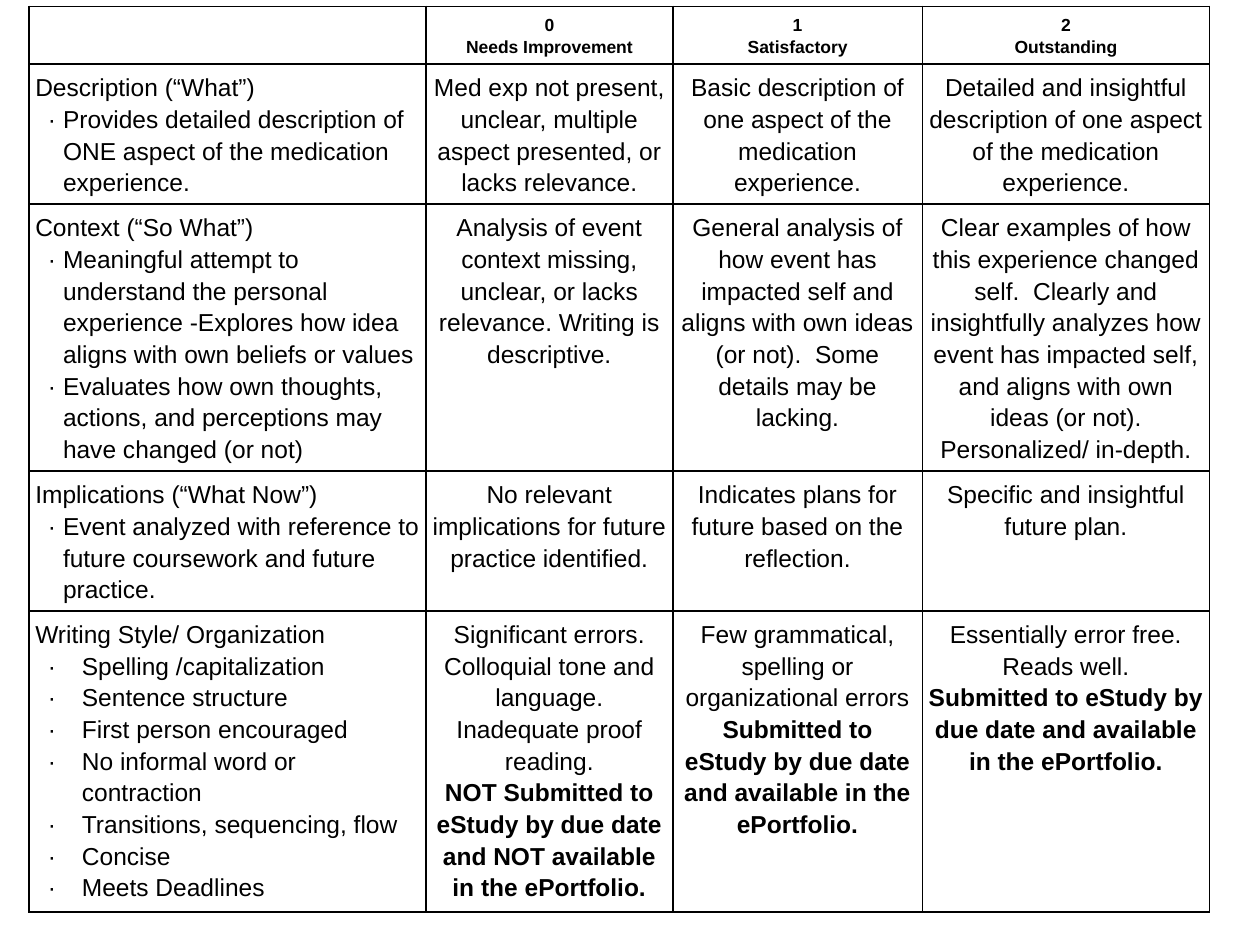
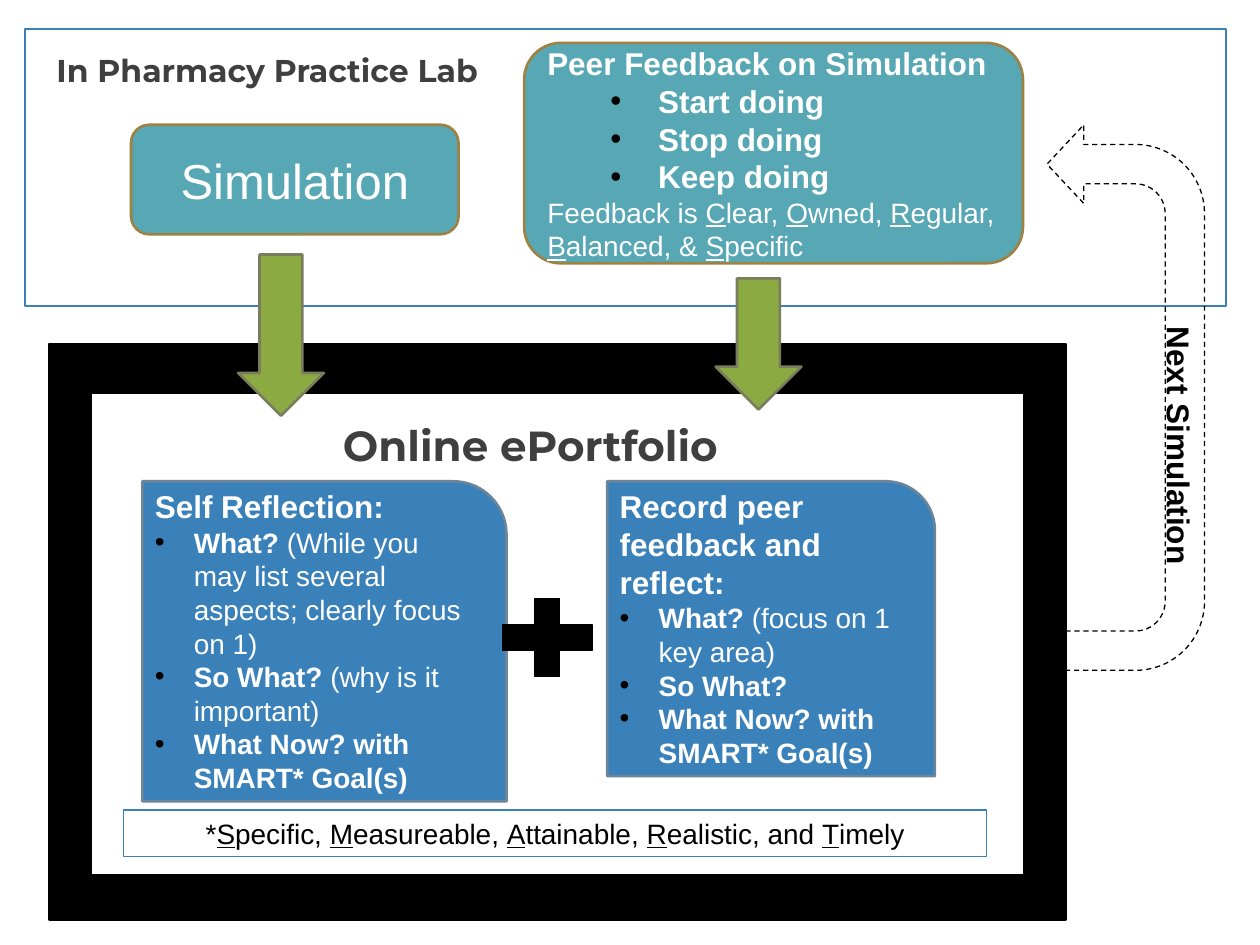
"""Build a reflection rubric and a simulation feedback cycle."""
from dataclasses import dataclass

from lxml import etree
from pptx import Presentation
from pptx.dml.color import RGBColor
from pptx.enum import dml, shapes, text
from pptx.oxml import ns
from pptx.util import Inches, Pt


@dataclass(frozen=True)
class Theme:
    """Colours, fonts and type sizes shared by both slides."""
    black: str = "000000"
    white: str = "FFFFFF"
    blue: str = "3A81BA"
    blue_edge: str = "6C859A"
    teal: str = "57A7B5"
    teal_edge: str = "9E8243"
    green: str = "8BAB42"
    green_edge: str = "797D5E"
    heading: str = "3F3F3F"
    body_font: str = "Arial"
    heading_font: str = "Montserrat"
    level_size: int = 10
    rubric_size: int = 14
    note_size: int = 16
    lead_size: int = 18
    title_size: int = 24
    simulation_size: int = 28


THEME = Theme()
SHAPE = shapes.MSO_SHAPE
CENTER = text.PP_ALIGN.CENTER
LEFT = text.PP_ALIGN.LEFT

LEVELS = ["Needs Improvement", "Satisfactory", "Outstanding"]
COLUMN_WIDTHS = [3.15, 1.96, 1.98, 2.28]
ROW_HEIGHTS = [0.46, 1.11, 2.12, 1.11, 2.39]
ON_TIME = "Submitted to eStudy by due date and available in the ePortfolio."
LATE = "NOT Submitted to eStudy by due date and NOT available in the ePortfolio."
DEADLINES = [LATE, ON_TIME, ON_TIME]

CRITERIA = [
    ("Description (“What”)",
     ["Provides detailed description of ONE aspect of the medication experience."],
     [["Med exp not present, unclear, multiple aspect presented, or lacks relevance."],
      ["Basic description of one aspect of the medication experience."],
      ["Detailed and insightful description of one aspect of the medication experience."]]),
    ("Context (“So What”)",
     ["Meaningful attempt to understand the personal experience -Explores how idea "
      "aligns with own beliefs or values",
      "Evaluates how own thoughts, actions, and perceptions may have changed (or not)"],
     [["Analysis of event context missing, unclear, or lacks relevance. "
       "Writing is descriptive."],
      ["General analysis of how event has impacted self and aligns with own ideas "
       "(or not).  Some details may be lacking."],
      ["Clear examples of how this experience changed self.  Clearly and insightfully "
       "analyzes how event has impacted self, and aligns with own ideas (or not). "
       "Personalized/ in-depth."]]),
    ("Implications (“What Now”)",
     ["Event analyzed with reference to future coursework and future practice."],
     [["No relevant implications for future practice identified."],
      ["Indicates plans for future based on the reflection."],
      ["Specific and insightful future plan."]]),
    ("Writing Style/ Organization",
     ["Spelling /capitalization", "Sentence structure", "First person encouraged",
      "No informal word or contraction", "Transitions, sequencing, flow", "Concise",
      "Meets Deadlines"],
     [["Significant errors.", "Colloquial tone and language. Inadequate proof reading."],
      ["Few grammatical, spelling or organizational errors"],
      ["Essentially error free.", "Reads well."]]),
]


def rgb(code):
    """Turn a hex code into a colour."""
    return RGBColor.from_string(code)


def style(font, size, color=THEME.black, bold=False, name=THEME.body_font):
    """Set the look of a font."""
    font.name, font.size, font.bold = name, Pt(size), bold
    font.color.rgb = rgb(color)


def add_paragraph(frame, size, color=THEME.black, bold=False, align=LEFT,
                  name=THEME.body_font):
    """Add a styled paragraph, using the first one while it is empty."""
    first = frame.paragraphs[0]
    paragraph = frame.add_paragraph() if first.runs else first
    paragraph.alignment = align
    style(paragraph.font, size, color, bold, name)
    return paragraph


def add_text(frame, words, size, **look):
    """Add a paragraph with one run."""
    paragraph = add_paragraph(frame, size, **look)
    paragraph.add_run().text = words
    return paragraph


def add_initials(frame, words, **look):
    """Add a paragraph in which parts between underscores are underlined."""
    paragraph = add_paragraph(frame, THEME.note_size, **look)
    for index, part in enumerate(words.split("_")):
        run = paragraph.add_run()
        run.text = part
        if index % 2:
            run.font.underline = True


def set_bullet(paragraph, margin, hang, char="•"):
    """Give a paragraph a black hanging bullet."""
    properties = paragraph._p.get_or_add_pPr()
    properties.set("marL", str(Inches(margin)))
    properties.set("indent", str(-Inches(hang)))
    color = etree.SubElement(properties, ns.qn("a:buClr"))
    etree.SubElement(color, ns.qn("a:srgbClr"), val=THEME.black)
    etree.SubElement(properties, ns.qn("a:buFont"), typeface=THEME.body_font)
    etree.SubElement(properties, ns.qn("a:buChar"), char=char)
    end = properties.find(ns.qn("a:defRPr"))
    if end is not None:
        properties.append(end)


def set_insets(frame):
    """Wrap the text and set the usual insets."""
    frame.word_wrap = True
    frame.margin_left = frame.margin_right = Inches(0.1)
    frame.margin_top = frame.margin_bottom = Inches(0.05)


def add_box(slide, kind, place, fill=None, edge=THEME.black, width=1.5, adjust=(),
            anchor=text.MSO_ANCHOR.TOP):
    """Add a preset shape with its fill, outline and text insets."""
    box = slide.shapes.add_shape(kind, *map(Inches, place))
    box.shadow.inherit = False
    for index, value in enumerate(adjust):
        box.adjustments[index] = value
    if fill:
        box.fill.solid()
        box.fill.fore_color.rgb = rgb(fill)
    else:
        box.fill.background()
    box.line.color.rgb = rgb(edge)
    box.line.width = Pt(width)
    set_insets(box.text_frame)
    box.text_frame.vertical_anchor = anchor
    return box


def add_heading(slide, words, place, size, align=LEFT):
    """Add a heading in the heading font."""
    frame = slide.shapes.add_textbox(*map(Inches, place)).text_frame
    set_insets(frame)
    add_text(frame, words, size, color=THEME.heading, bold=True, align=align,
             name=THEME.heading_font)


def add_activity(slide, place):
    """Add a teal rounded box for a lab activity and return its text."""
    return add_box(slide, SHAPE.ROUNDED_RECTANGLE, place, THEME.teal, THEME.teal_edge,
                   adjust=[0.167], anchor=text.MSO_ANCHOR.MIDDLE).text_frame


def add_reflection(slide, place, lead, questions):
    """Add a blue card with a lead line and bulleted questions."""
    card = add_box(slide, SHAPE.ROUND_1_RECTANGLE, place, THEME.blue, THEME.blue_edge,
                   adjust=[0.167])
    frame = card.text_frame
    add_text(frame, lead, THEME.lead_size, color=THEME.white, bold=True)
    for question, hint in questions:
        paragraph = add_text(frame, question, THEME.note_size, color=THEME.white, bold=True)
        set_bullet(paragraph, 0.31, 0.31)
        if hint:
            run = paragraph.add_run()
            run.text = f" {hint}"
            run.font.bold = False


def add_next_simulation(slide):
    """Add the dashed arrow that leads back to the lab."""
    arrow = add_box(slide, SHAPE.U_TURN_ARROW, (6.77, 2.53, 4.33, 1.25), width=0.75,
                    adjust=[0.25, 0.25, 0.234, 0.438, 1])
    arrow.rotation = 90
    arrow.line.dash_style = dml.MSO_LINE.DASH
    arrow._element.spPr.get_or_add_xfrm().set("flipH", "1")
    label = add_text(arrow.text_frame, "Next Simulation", THEME.lead_size, bold=True,
                     align=CENTER)
    label._p.get_or_add_pPr().set("marL", str(Inches(0.76)))


def frame_cell(cell):
    """Give a table cell a white fill, black borders and even insets."""
    properties = cell._tc.get_or_add_tcPr()
    for side in ("a:lnL", "a:lnR", "a:lnT", "a:lnB"):
        border = etree.SubElement(properties, ns.qn(side), w=str(Pt(1)))
        fill = etree.SubElement(border, ns.qn("a:solidFill"))
        etree.SubElement(fill, ns.qn("a:srgbClr"), val=THEME.black)
    cell.fill.solid()
    cell.fill.fore_color.rgb = rgb(THEME.white)
    cell.margin_left = cell.margin_right = Inches(0.05)
    cell.margin_top = cell.margin_bottom = Inches(0.05)


def add_cell_text(cell, words, size=THEME.rubric_size, **look):
    """Add one paragraph to a rubric cell."""
    paragraph = add_text(cell.text_frame, words, size, **look)
    paragraph.line_spacing = 1.15
    return paragraph


def build_rubric(slide):
    """Build the table of criteria and levels."""
    rubric = slide.shapes.add_table(
        len(ROW_HEIGHTS), len(COLUMN_WIDTHS), Inches(0.23), Inches(0.05),
        Inches(sum(COLUMN_WIDTHS)), Inches(sum(ROW_HEIGHTS))).table
    for column, width in zip(rubric.columns, COLUMN_WIDTHS):
        column.width = Inches(width)
    for row, height in zip(rubric.rows, ROW_HEIGHTS):
        row.height = Inches(height)
    for cell in rubric.iter_cells():
        frame_cell(cell)
    for score, level in enumerate(LEVELS):
        for words in (str(score), level):
            add_cell_text(rubric.cell(0, score + 1), words, THEME.level_size, bold=True,
                          align=CENTER)
    for row, (criterion, points, levels) in enumerate(CRITERIA, 1):
        is_writing = row == len(CRITERIA)
        add_cell_text(rubric.cell(row, 0), criterion)
        margin = 0.37 if is_writing else 0.22
        for point in points:
            set_bullet(add_cell_text(rubric.cell(row, 0), point), margin, margin - 0.1, "·")
        for column, descriptions in enumerate(levels, 1):
            for description in descriptions:
                add_cell_text(rubric.cell(row, column), description, align=CENTER)
            if is_writing:
                add_cell_text(rubric.cell(row, column), DEADLINES[column - 1], bold=True,
                              align=CENTER)


def build_cycle(slide):
    """Build the diagram from the practice lab to the online portfolio."""
    add_box(slide, SHAPE.RECTANGLE, (0.39, 2.73, 8.07, 4.57), THEME.black)
    add_box(slide, SHAPE.RECTANGLE, (0.72, 3.12, 7.41, 3.83), THEME.white)
    add_box(slide, SHAPE.FLOWCHART_PROCESS, (0.2, 0.23, 9.53, 2.2), THEME.white, THEME.blue)

    simulation = add_activity(slide, (1.04, 0.99, 2.6, 0.87))
    add_text(simulation, "Simulation", THEME.simulation_size, color=THEME.white, align=CENTER)
    feedback = add_activity(slide, (4.16, 0.34, 3.96, 1.75))
    lead_look = {"size": THEME.lead_size, "color": THEME.white, "bold": True}
    add_text(feedback, "Peer Feedback on Simulation", **lead_look)
    for advice in ("Start doing", "Stop doing", "Keep doing"):
        set_bullet(add_text(feedback, advice, **lead_look), 0.88, 0.38)
    add_initials(feedback, "Feedback is _C_lear, _O_wned, _R_egular, _B_alanced, & _S_pecific",
                 color=THEME.white)

    add_reflection(slide, (1.13, 3.82, 2.89, 2.54), "Self Reflection:", [
        ("What?", "(While you may list several aspects; clearly focus on 1)"),
        ("So What?", "(why is it important)"),
        ("What Now? with SMART* Goal(s)", "")])
    add_next_simulation(slide)
    add_reflection(slide, (4.82, 3.82, 2.6, 2.34), "Record peer feedback and reflect:", [
        ("What?", "(focus on 1 key area)"),
        ("So What?", ""),
        ("What Now? with SMART* Goal(s)", "")])
    add_box(slide, SHAPE.MATH_PLUS, (3.86, 4.64, 0.97, 0.84), THEME.black, width=0.75,
            adjust=[0.235])
    for place in ((1.89, 2.02, 0.68, 1.28), (5.68, 2.21, 0.68, 1.04)):
        add_box(slide, SHAPE.DOWN_ARROW, place, THEME.green, THEME.green_edge)

    add_heading(slide, "Online ePortfolio", (2.48, 3.28, 3.46, 0.5), THEME.title_size, CENTER)
    add_heading(slide, "In Pharmacy Practice Lab", (0.35, 0.36, 4.17, 0.4), THEME.lead_size)
    smart = add_box(slide, SHAPE.RECTANGLE, (0.98, 6.43, 6.85, 0.37), edge=THEME.blue,
                    width=0.75)
    add_initials(smart.text_frame,
                 "*_S_pecific, _M_easureable, _A_ttainable, _R_ealistic, and _T_imely",
                 align=CENTER)


def main():
    """Build both slides and save the deck."""
    deck = Presentation()
    deck.slide_width, deck.slide_height = Inches(10), Inches(7.5)
    for build in (build_rubric, build_cycle):
        build(deck.slides.add_slide(deck.slide_layouts[6]))
    deck.save("out.pptx")


if __name__ == "__main__":
    main()
